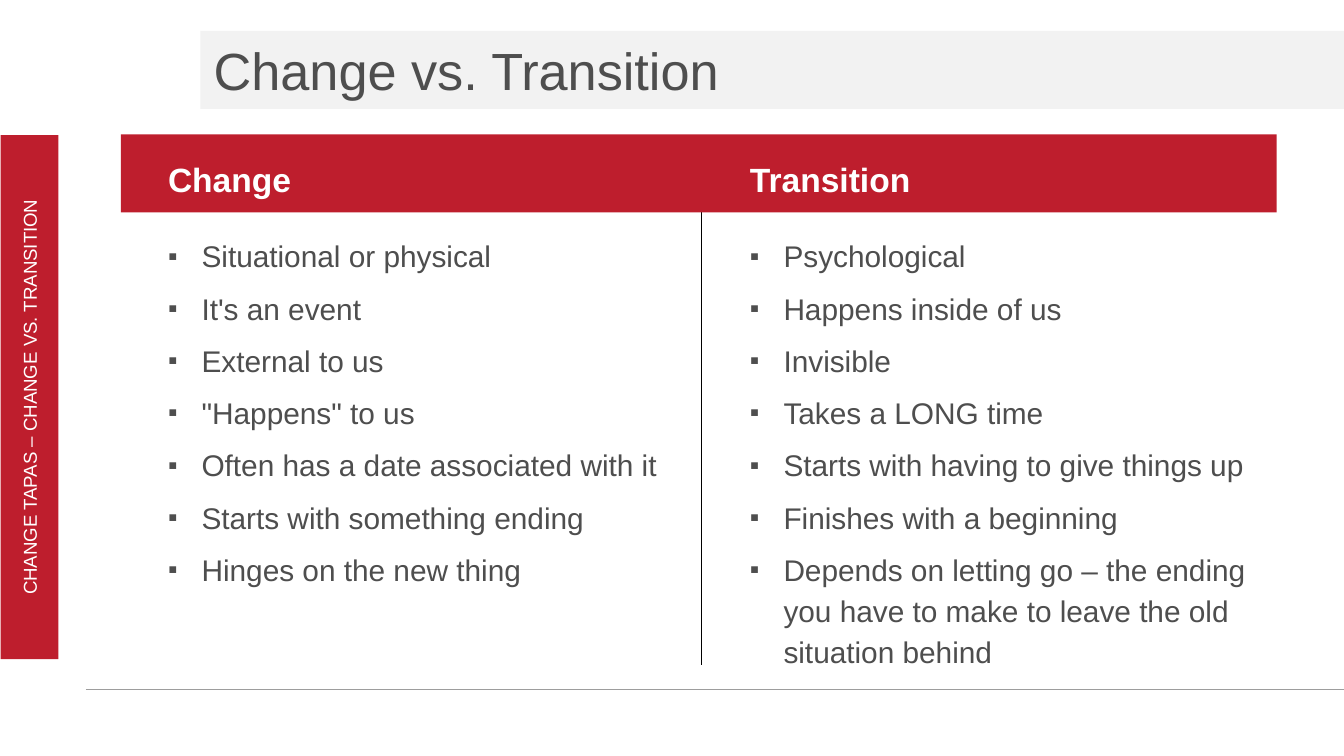
from lxml.etree import SubElement
from pptx import Presentation
from pptx.dml.color import RGBColor
from pptx.enum.shapes import MSO_CONNECTOR as Connector, MSO_SHAPE as Shape
from pptx.enum.text import MSO_ANCHOR as Anchor, MSO_AUTO_SIZE as AutoSize, PP_ALIGN as Align
from pptx.oxml.ns import qn
from pptx.util import Inches, Pt

COLORS = {"red": "BE1E2D", "band": "F2F2F2", "rule": "9D9D9D",
          "divider": "000000", "text": "4E4E4E", "white": "FFFFFF"}
HEADING = {"line_spacing": Pt(26), "space_before": Pt(0), "space_after": Pt(12)}
BULLET = {"line_spacing": Pt(22), "space_before": Pt(6), "space_after": Pt(0)}


def color(name):
    return RGBColor.from_string(COLORS[name])


class SlideBuilder:
    """Holds the style and the current slide."""

    font = "Arial"

    def __init__(self, slide):
        self.slide = slide

    def format_text(self, paragraph, size, color_name, bold=False, **layout):
        for key, value in layout.items():
            setattr(paragraph, key, value)
        for key, value in {"name": self.font, "size": Pt(size), "bold": bold}.items():
            setattr(paragraph.font, key, value)
        paragraph.font.color.rgb = color(color_name)

    def bar(self, left, top, width, height, fill):
        bar = self.slide.shapes.add_shape(
            Shape.RECTANGLE, *map(Inches, (left, top, width, height)))
        bar.shadow.inherit = False
        bar.fill.solid()
        bar.fill.fore_color.rgb = color(fill)
        bar.line.fill.background()
        return bar

    def side_label(self, text, *box):
        label = self.bar(*box, "red")
        label.rotation = 270
        label.text_frame.vertical_anchor = Anchor.MIDDLE
        paragraph = label.text_frame.paragraphs[0]
        paragraph.text = text
        self.format_text(paragraph, 10, "white", alignment=Align.CENTER)

    def line(self, x1, y1, x2, y2, line_color, width):
        line = self.slide.shapes.add_connector(
            Connector.STRAIGHT, *map(Inches, (x1, y1, x2, y2)))
        line.line.color.rgb = color(line_color)
        line.line.width = Pt(width)
        SubElement(line.element.spPr, qn("a:effectLst"))

    def place(self, index, left, top, width, height):
        """Move a placeholder to its box, in front of the bars."""
        holder = self.slide.placeholders[index]
        box = {"left": left, "top": top, "width": width, "height": height}
        for key, value in box.items():
            setattr(holder, key, Inches(value))
        self.slide.shapes.element.append(holder.element)
        holder.text_frame.auto_size = AutoSize.NONE
        holder.text_frame.word_wrap = True
        return holder.text_frame

    def title(self, text, *box):
        frame = self.place(0, *box)
        frame.vertical_anchor = Anchor.MIDDLE
        frame.text = text
        self.format_text(frame.paragraphs[0], 28, "text", alignment=Align.LEFT)

    def set_bullet(self, paragraph, mark=None):
        properties = paragraph._p.get_or_add_pPr()
        indent = Inches(0.25) if mark else 0
        properties.set("marL", str(indent))
        properties.set("indent", str(-indent))
        if mark:
            SubElement(properties, qn("a:buSzPct"), val="90000")
            SubElement(properties, qn("a:buFont"), typeface=self.font)
            SubElement(properties, qn("a:buChar"), char=mark)
        else:
            SubElement(properties, qn("a:buNone"))

    def column(self, index, heading, points, *box):
        frame = self.place(index, *box)
        frame.text = "\n".join([heading, *points])
        heading_line, *point_lines = frame.paragraphs
        self.set_bullet(heading_line)
        self.format_text(heading_line, 18, "white", bold=True, **HEADING)
        for point in point_lines:
            self.set_bullet(point, "▪")
            self.format_text(point, 16, "text", **BULLET)


def main():
    # Widescreen 16:9 page
    deck = Presentation()
    deck.slide_width = Inches(10)
    deck.slide_height = Inches(10) * 9 // 16
    builder = SlideBuilder(deck.slides.add_slide(deck.slide_layouts[3]))

    # Title band and footer rule
    builder.bar(1.49, 0.23, 8.51, 0.58, "band")
    builder.line(0.64, 5.13, 10, 5.13, "rule", 0.75)

    # Column divider, header bar and side label
    builder.line(5.22, 1.55, 5.22, 4.95, "divider", 1)
    builder.bar(0.9, 1, 8.6, 0.58, "red")
    builder.side_label("CHANGE TAPAS – CHANGE VS. TRANSITION", -1.73, 2.74, 3.9, 0.43)

    # Title and the two compared lists
    builder.title("Change vs. Transition", 1.49, 0.23, 8.01, 0.58)
    builder.column(1, "Change", [
        "Situational or physical",
        "It's an event",
        "External to us",
        "\"Happens\" to us",
        "Often has a date associated with it",
        "Starts with something ending",
        "Hinges on the new thing",
    ], 1.15, 1.07, 3.85, 3.9)
    builder.column(2, "Transition", [
        "Psychological",
        "Happens inside of us",
        "Invisible",
        "Takes a LONG time",
        "Starts with having to give things up",
        "Finishes with a beginning",
        "Depends on letting go – the ending you have to make to leave the old situation behind",
    ], 5.48, 1.07, 4.02, 3.9)

    deck.save("out.pptx")


if __name__ == "__main__":
    main()
